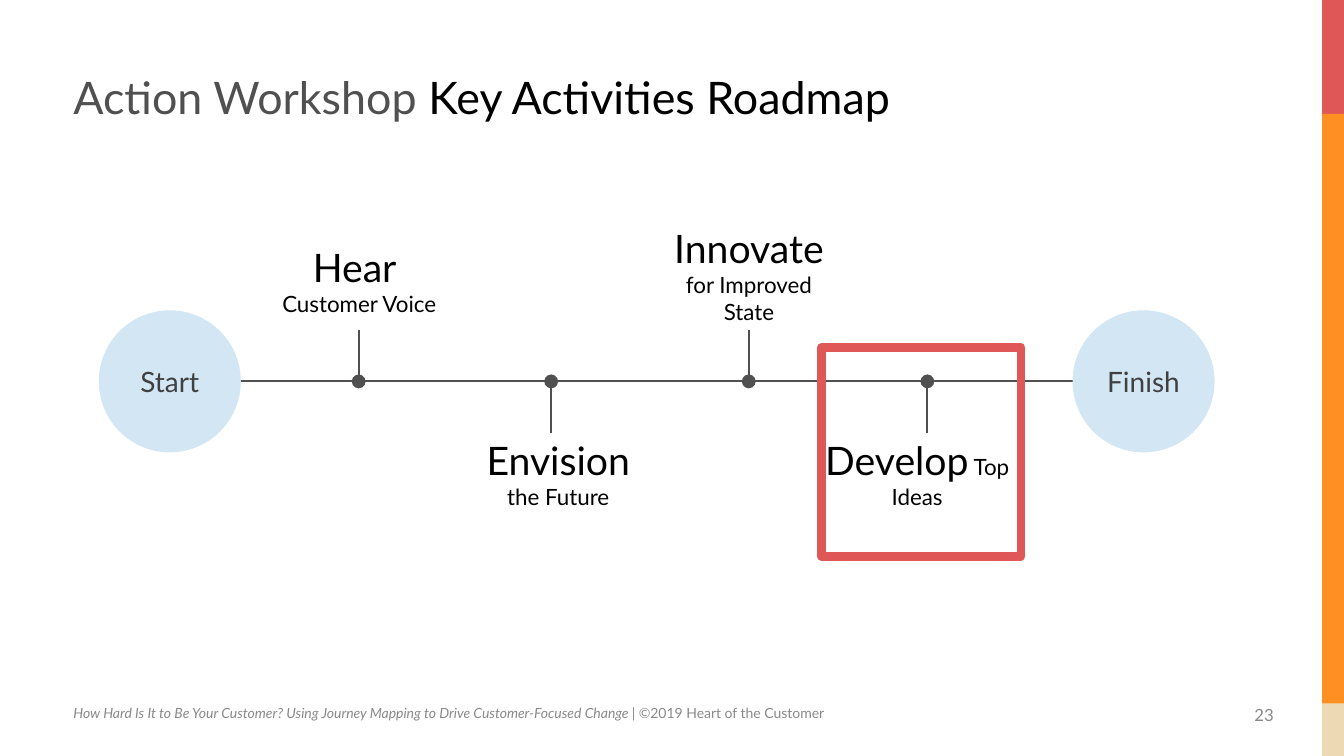
import pptx
import pptx.util
import pptx.dml.color
import pptx.enum.shapes
import pptx.enum.text
import pptx.oxml
import pptx.oxml.ns

Cm = pptx.util.Cm
Pt = pptx.util.Pt
RGBColor = pptx.dml.color.RGBColor
Shape = pptx.enum.shapes.MSO_SHAPE
Align = pptx.enum.text.PP_ALIGN
Anchor = pptx.enum.text.MSO_ANCHOR

FONT = "Lato"
RED = RGBColor(0xDF, 0x57, 0x57)
ORANGE = RGBColor(0xFF, 0x8F, 0x22)
SAND = RGBColor(0xED, 0xD9, 0xB4)
BLUE = RGBColor(0xD2, 0xE6, 0xF4)
SLATE = RGBColor(0x50, 0x50, 0x50)
DARK = RGBColor(0x40, 0x40, 0x40)
GREY = RGBColor(0x89, 0x89, 0x89)
BLACK = RGBColor(0, 0, 0)


def add_run(para, text, size, color, slant=False):
    run = para.add_run()
    run.text = text
    run.font.name = FONT
    run.font.size = Pt(size)
    run.font.color.rgb = color
    run.font.italic = slant


def add_text(slide, box, align=Align.LEFT, anchor=Anchor.TOP, wrap=True):
    frame = slide.shapes.add_textbox(*map(Cm, box)).text_frame
    frame.word_wrap = wrap
    frame.vertical_anchor = anchor
    para = frame.paragraphs[0]
    para.alignment = align
    return para


def add_form(slide, kind, box, fill):
    form = slide.shapes.add_shape(kind, *map(Cm, box))
    form.shadow.inherit = False
    form.line.fill.background()
    if fill is None:
        form.fill.background()
    else:
        form.fill.solid()
        form.fill.fore_color.rgb = fill
    return form


def add_line(slide, *ends, dot=False):
    line = slide.shapes.add_connector(
        pptx.enum.shapes.MSO_CONNECTOR.STRAIGHT, *map(Cm, ends))
    line.line.color.rgb = SLATE
    line.line.width = Pt(1.25)
    if dot:
        head = pptx.oxml.parse_xml(
            f'<a:headEnd {pptx.oxml.ns.nsdecls("a")} type="oval" w="lg" len="lg"/>')
        line.line._get_or_add_ln().append(head)
    line._element.spPr.append(
        pptx.oxml.parse_xml(f'<a:effectLst {pptx.oxml.ns.nsdecls("a")}/>'))


def draw_bar(slide, box):
    left, top, width, height = box
    first, last = 2.87, 1.32
    for part, fill in ((first, RED), (height - first - last, ORANGE), (last, SAND)):
        add_form(slide, Shape.RECTANGLE, (left, top, width, part), fill)
        top += part


def draw_title(slide, box):
    para = add_text(slide, box, anchor=Anchor.BOTTOM)
    para.line_spacing = 0.9
    add_run(para, "Action Workshop ", 32, SLATE)
    add_run(para, "Key Activities Roadmap", 32, BLACK)


def draw_foot(slide, box):
    left, top, width, height = box
    para = add_text(slide, (left, top, 24.46, 0.69))
    add_run(para, "How Hard Is It to Be Your Customer? Using Journey Mapping "
            "to Drive Customer-Focused Change ", 10, GREY, True)
    add_run(para, "| ©2019 Heart of the Customer", 10, GREY)
    page = add_text(slide, (left + width - 1.04, top, 1.04, height),
                    Align.CENTER, wrap=False)
    add_run(page, "23", 12, GREY)


def draw_end(slide, box, text):
    disc = add_form(slide, Shape.OVAL, box, BLUE)
    frame = disc.text_frame
    frame.vertical_anchor = Anchor.MIDDLE
    para = frame.paragraphs[0]
    para.alignment = Align.CENTER
    add_run(para, text, 20, DARK)


def draw_stop(slide, spot, box, above, head, rest, split):
    x, y = spot
    add_line(slide, x, y, x, y - 1.3 if above else y + 1.3, dot=True)
    para = add_text(slide, box, Align.CENTER,
                    Anchor.BOTTOM if above else Anchor.TOP)
    add_run(para, head, 28, BLACK)
    if split:
        para.add_line_break()
    add_run(para, rest, 16, BLACK)


def draw_road(slide, box):
    left, top, width, height = box
    disc = 3.58
    axis = top + 4.12
    draw_end(slide, (left, axis - disc / 2, disc, disc), "Start")
    add_line(slide, left + disc, axis, left + width - 2.87, axis)
    draw_end(slide, (left + width - disc, axis - disc / 2, disc, disc), "Finish")
    stops = (
        (6.55, 2.64, 0.5, 7.85, 2.13, True, "Hear ", "Customer Voice", True),
        (11.4, 9.37, 5.38, 4.42, 2.13, False, "Envision", "the Future", True),
        (16.38, 13.87, 0, 5.03, 2.82, True, "Innovate", " for Improved State", False),
        (20.88, 18.01, 5.38, 5.23, 2.13, False, "Develop", " Top Ideas", False),
    )
    for x, dx, dy, wide, high, *text in stops:
        draw_stop(slide, (left + x, axis),
                  (left + dx, top + dy, wide, high), *text)
    mark = add_form(slide, Shape.RECTANGLE,
                    (left + 18.21, top + 3.27, 5.03, height - 3.27), None)
    mark.line.color.rgb = RED
    mark.line.width = Pt(6)


def main():
    deck = pptx.Presentation()
    deck.slide_width = Cm(33.87)
    deck.slide_height = Cm(19.05)
    slide = deck.slides.add_slide(deck.slide_layouts[6])
    draw_bar(slide, (33.32, 0, 0.55, 19.05))
    draw_foot(slide, (1.6, 17.64, 30.78, 0.76))
    draw_title(slide, (1.6, 0, 29.03, 3.25))
    draw_road(slide, (2.49, 5.49, 28.12, 8.53))
    deck.save("out.pptx")


if __name__ == "__main__":
    main()
